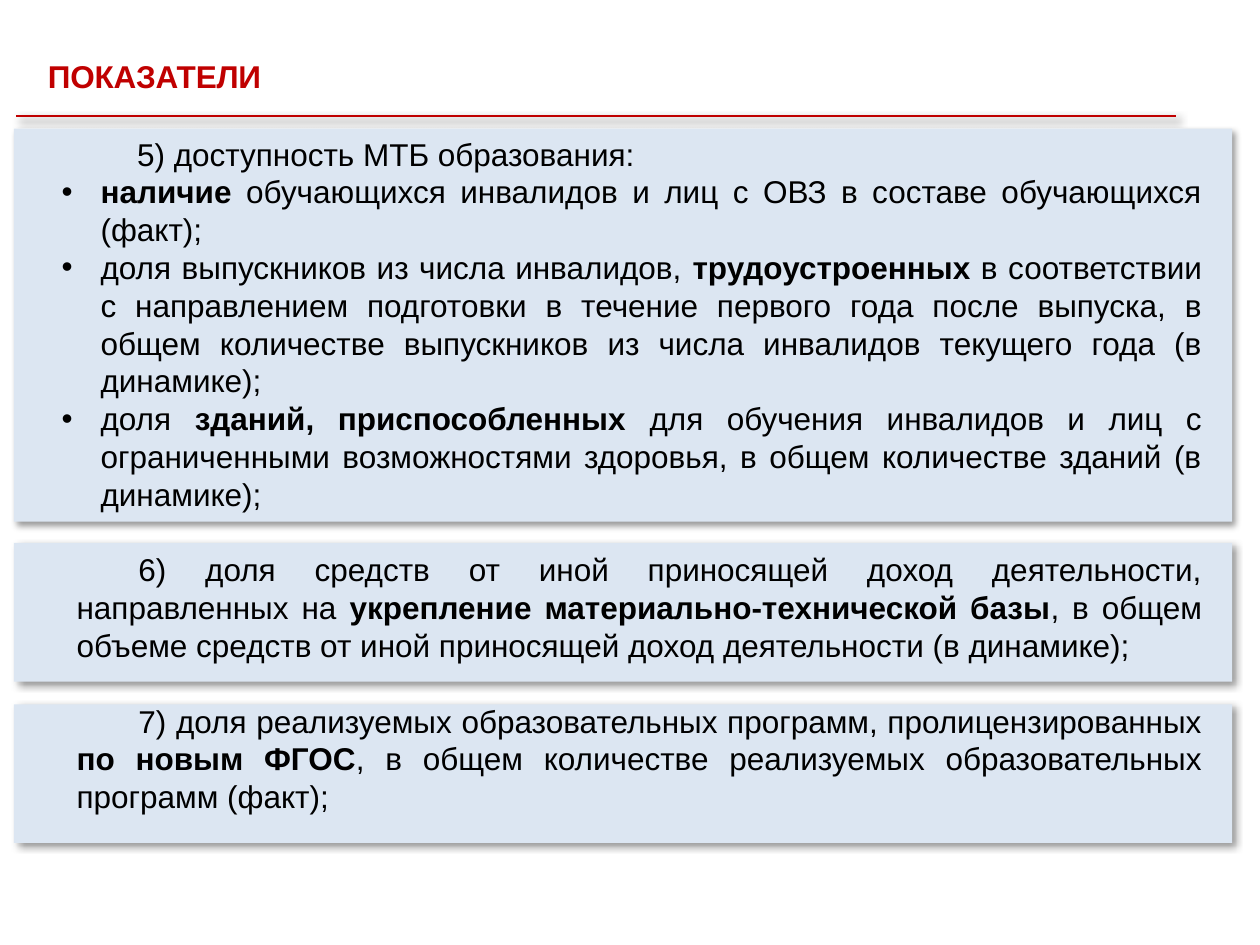
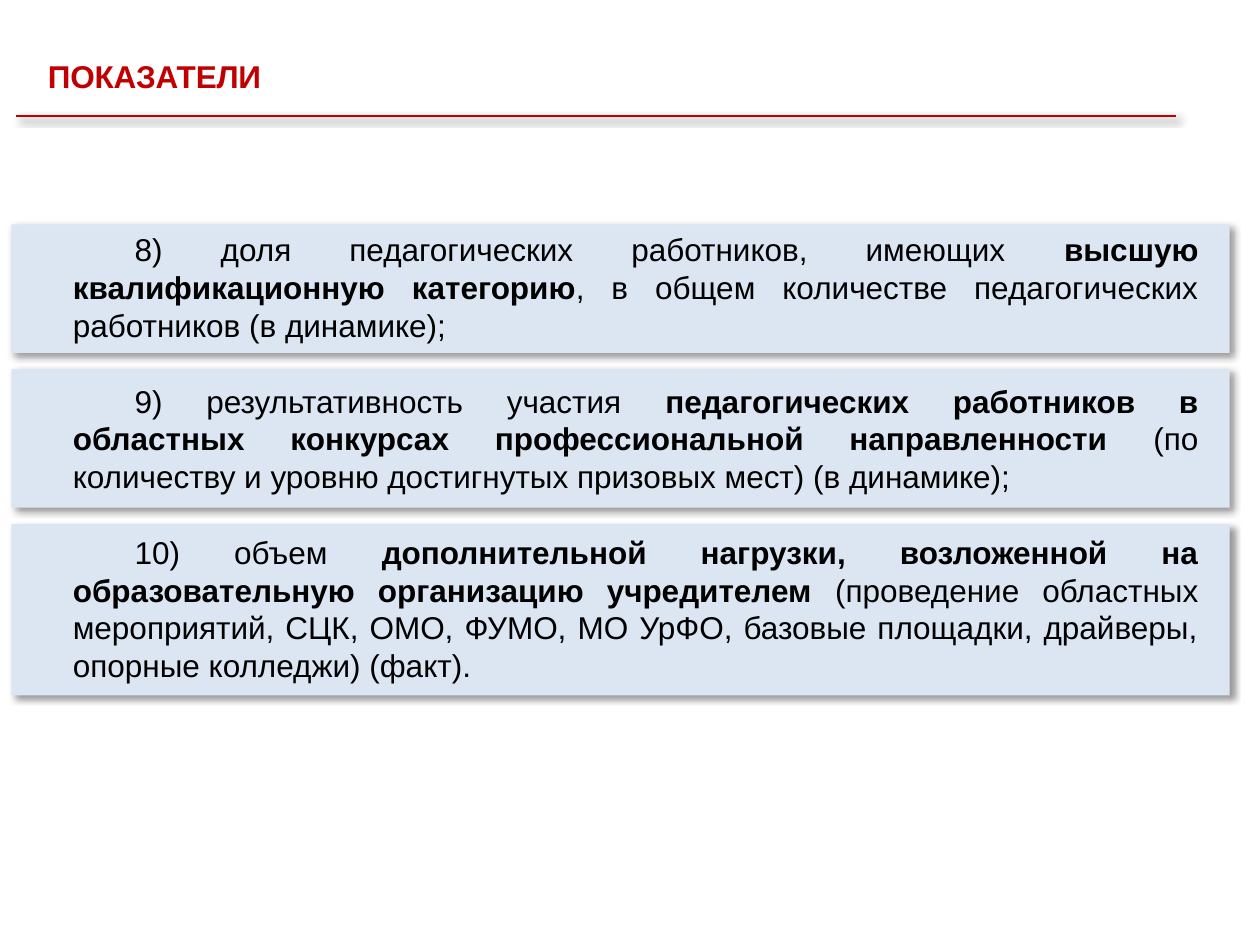
"""Builds two slides of numbered indicators on shaded cards."""
from dataclasses import dataclass

from lxml.etree import SubElement
from pptx import Presentation
from pptx.dml.color import RGBColor
from pptx.enum.shapes import MSO_CONNECTOR, MSO_SHAPE
from pptx.enum.text import MSO_ANCHOR, MSO_AUTO_SIZE, PP_ALIGN
from pptx.oxml import parse_xml
from pptx.oxml.ns import nsdecls, qn
from pptx.util import Inches, Pt

TITLE = "ПОКАЗАТЕЛИ"

INDENTS = {"heading": (0, 0.98), "bullet": (0.69, -0.31), "item": (0.5, 0.49)}

PAGES = [
    {
        "card_left": 0.11,
        "cards": [(1.02, 3.12), (4.31, 1.1), (5.59, 1.1)],
        "text_area": (0.01, 1.02, 9.63, 6.16),
        "paragraphs": [
            ("heading", "5) доступность МТБ образования:"),
            ("bullet", "**наличие** обучающихся инвалидов и лиц с ОВЗ в составе "
                       "обучающихся (факт);"),
            ("bullet", "доля выпускников из числа инвалидов, **трудоустроенных** в "
                       "соответствии с направлением подготовки в течение первого года "
                       "после выпуска, в общем количестве выпускников из числа "
                       "инвалидов текущего года (в динамике);"),
            ("bullet", "доля **зданий, приспособленных **для обучения инвалидов и лиц "
                       "с ограниченными возможностями здоровья, в общем количестве "
                       "зданий (в динамике);"),
            ("item", "6) доля средств от иной приносящей доход деятельности, "
                     "направленных на **укрепление материально-технической базы**, в "
                     "общем объеме средств от иной приносящей доход деятельности "
                     "(в динамике);"),
            ("item", "7) доля реализуемых образовательных программ, "
                     "пролицензированных **по новым ФГОС**, в общем количестве "
                     "реализуемых образовательных программ (факт);"),
        ],
    },
    {
        "card_left": 0.09,
        "cards": [(1.78, 1.02), (2.93, 1.1), (4.16, 1.36)],
        "text_area": (-0.02, 1.78, 9.63, 3.74),
        "paragraphs": [
            ("item", "8) доля педагогических работников, имеющих **высшую "
                     "квалификационную категорию**, в общем количестве педагогических "
                     "работников (в динамике);"),
            ("item", "9) результативность участия **педагогических работников в "
                     "областных конкурсах профессиональной направленности** (по "
                     "количеству и уровню достигнутых призовых мест) (в динамике);"),
            ("item", "10) объем **дополнительной нагрузки, возложенной на "
                     "образовательную организацию учредителем **(проведение областных "
                     "мероприятий, СЦК, ОМО, ФУМО, МО УрФО, базовые площадки, "
                     "драйверы, опорные колледжи) (факт)."),
        ],
    },
]


@dataclass(frozen=True)
class Theme:
    font: str = "Arial"
    size: Pt = Pt(18)
    line_height: Pt = Pt(21.6)
    accent: RGBColor = RGBColor(0xC0, 0x00, 0x00)
    card: RGBColor = RGBColor(0xDC, 0xE6, 0xF2)
    text: RGBColor = RGBColor(0x00, 0x00, 0x00)
    card_width: float = 9.67


THEME = Theme()


def add_shadow(shape):
    shape._element.spPr.append(parse_xml(
        f'<a:effectLst {nsdecls("a")}><a:outerShdw blurRad="50800" dist="38100" '
        'dir="2700000" algn="tl" rotWithShape="0"><a:srgbClr val="000000">'
        '<a:alpha val="40000"/></a:srgbClr></a:outerShdw></a:effectLst>'))


def style_span(span, color, bold):
    span.font.name = THEME.font
    span.font.size = THEME.size
    span.font.color.rgb = color
    span.font.bold = bold


def add_title(page):
    title = page.shapes.title
    title.left, title.top, title.width, title.height = map(Inches, (0.28, 0.4, 1.91, 0.4))
    frame = title.text_frame
    frame.text = TITLE
    frame.word_wrap = False
    frame.auto_size = MSO_AUTO_SIZE.NONE
    frame.vertical_anchor = MSO_ANCHOR.TOP
    para = frame.paragraphs[0]
    para.alignment = PP_ALIGN.LEFT
    para.line_spacing = THEME.line_height
    span = para.runs[0]
    style_span(span, THEME.accent, True)
    span.font._element.set("spc", "-10")


def add_rule(page):
    rule = page.shapes.add_connector(
        MSO_CONNECTOR.STRAIGHT, *map(Inches, (0.13, 0.92, 9.33, 0.92)))
    rule.line.color.rgb = THEME.accent
    rule.line.width = Pt(1.5)
    add_shadow(rule)


def add_card(page, left, top, height):
    card = page.shapes.add_shape(
        MSO_SHAPE.RECTANGLE, *map(Inches, (left, top, THEME.card_width, height)))
    card.fill.solid()
    card.fill.fore_color.rgb = THEME.card
    card.line.fill.background()
    add_shadow(card)


def fill_paragraph(para, kind, text):
    margin, indent = INDENTS[kind]
    properties = para._p.get_or_add_pPr()
    properties.set("marL", str(Inches(margin)))
    properties.set("indent", str(Inches(indent)))
    if kind == "bullet":
        SubElement(properties, qn("a:buFont"), typeface=THEME.font)
        SubElement(properties, qn("a:buChar"), char="•")
    para.alignment = PP_ALIGN.JUSTIFY
    para.line_spacing = THEME.line_height
    for index, part in enumerate(text.split("**")):
        if part:
            span = para.add_run()
            span.text = part
            style_span(span, THEME.text, index % 2 == 1)


def add_indicators(page, area, paragraphs):
    frame = page.shapes.add_textbox(*map(Inches, area)).text_frame
    frame.word_wrap = True
    for index, (kind, text) in enumerate(paragraphs):
        para = frame.add_paragraph() if index else frame.paragraphs[0]
        fill_paragraph(para, kind, text)
        if index and kind == "item":
            para.space_before = THEME.line_height


def main():
    deck = Presentation()
    deck.slide_width, deck.slide_height = Inches(10), Inches(7.5)
    for content in PAGES:
        page = deck.slides.add_slide(deck.slide_layouts[5])
        for top, height in content["cards"]:
            add_card(page, content["card_left"], top, height)
        add_rule(page)
        add_title(page)
        add_indicators(page, content["text_area"], content["paragraphs"])
    deck.save("out.pptx")


if __name__ == "__main__":
    main()
